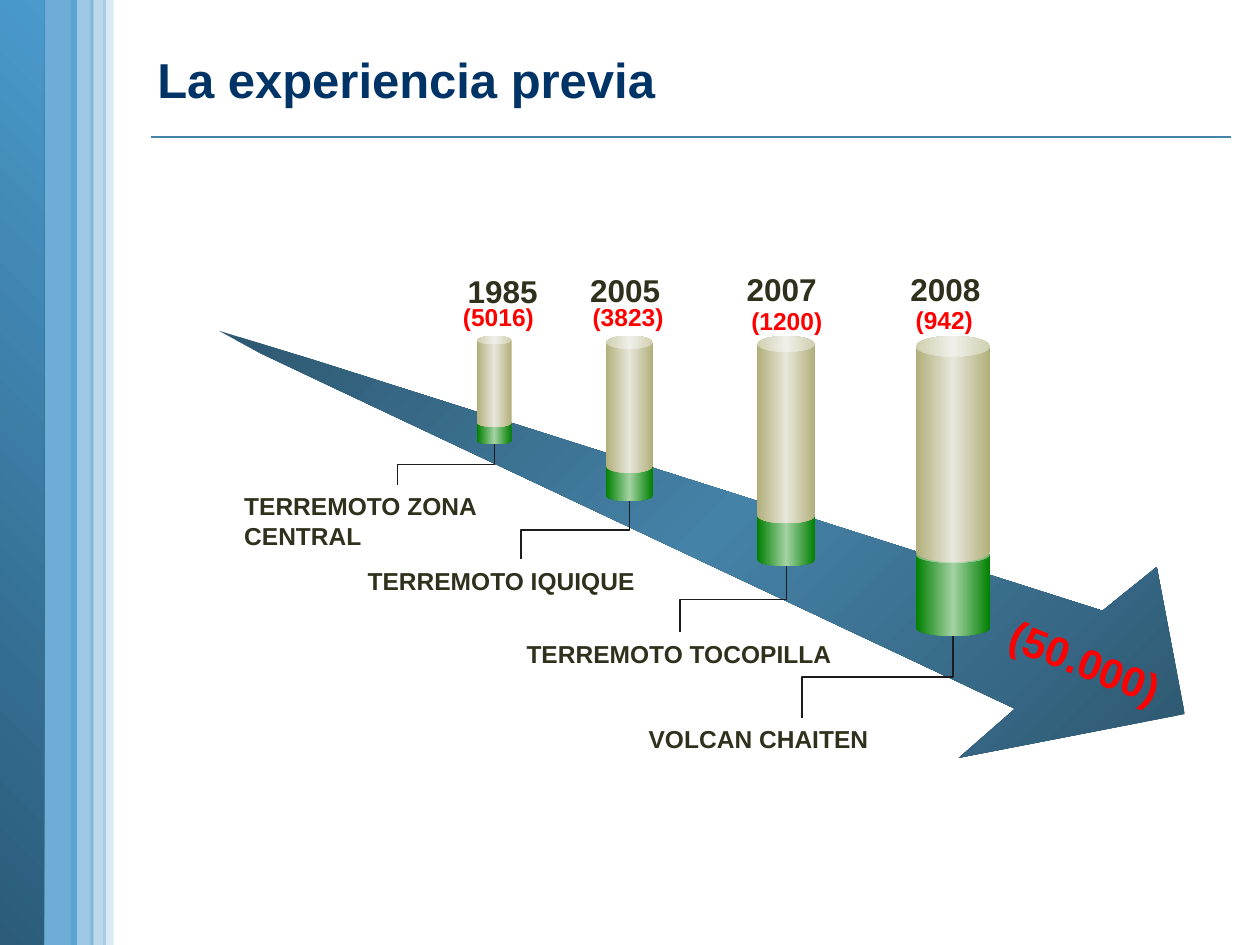
from lxml.etree import SubElement
from pptx import Presentation
from pptx.dml.color import RGBColor
from pptx.enum.shapes import MSO_CONNECTOR as Connector, MSO_SHAPE as Shape
from pptx.enum.text import MSO_ANCHOR as Anchor, PP_ALIGN as Align
from pptx.oxml import parse_xml
from pptx.oxml.ns import nsdecls, qn
from pptx.util import Pt

NAVY = RGBColor(0x00, 0x33, 0x66)
SKY = RGBColor(0x4A, 0x9A, 0xCC)
STEEL = RGBColor(0x45, 0x82, 0xA7)
GREEN = RGBColor(0x00, 0x80, 0x00)
PALE_GREEN = RGBColor(0xA4, 0xD2, 0xA4)
SAND = RGBColor(0xB2, 0xAF, 0x7A)
PALE_SAND = RGBColor(0xE7, 0xE7, 0xDC)
OLIVE = RGBColor(0x30, 0x31, 0x1D)
RED = RGBColor(0xFF, 0x00, 0x00)
BLACK = RGBColor(0x1C, 0x1C, 0x1C)

TITLE = "La experiencia previa"
TOTAL = "(50.000)"
STRIPES = [(59, 6, 20), (40.3, 13, 54), (51.8, 8.7, 37)]
ARROW = [(177.1, 205.2), (124.6, 188.6), (149, 201.6), (580.3, 404.6), (547.9, 433.4),
         (676.8, 408.2), (661, 324), (630, 349.2)]

EVENTS = [
    dict(year="1985", year_at=(253, 151.9), count="(5016)", count_at=(250.6, 169.2),
         label="TERREMOTO ZONA CENTRAL", label_at=(132.5, 277.2),
         left=272.6, width=19.8, sand=(192, 244, 0.238), green=(239.8, 253.8, 0.273)),
    dict(year="2005", year_at=(323, 151.2), count="(3823)", count_at=(324.7, 169.2),
         label="TERREMOTO IQUIQUE", label_at=(203, 319.7),
         left=346.3, width=26.8, sand=(191.8, 270.2, 0.282), green=(263.5, 286.2, 0.25)),
    dict(year="2007", year_at=(412.4, 150.5), count="(1200)", count_at=(415.4, 171.4),
         label="TERREMOTO TOCOPILLA", label_at=(293.8, 361.4),
         left=432.7, width=33.1, sand=(192, 299, 0.274), green=(291.6, 323.4, 0.217)),
    dict(year="2008", year_at=(506, 150.5), count="(942)", count_at=(505.4, 170.6),
         label="VOLCAN CHAITEN", label_at=(363.6, 410.4),
         left=523.4, width=42.4, sand=(192, 321.1, 0.279), green=(312.5, 363.4, 0.214)),
]
LABEL_WIDTH = 189.4
NUMBER_WIDTH = 68.4

presentation = Presentation()
presentation.slide_width, presentation.slide_height = Pt(720), Pt(540)
slide = presentation.slides.add_slide(presentation.slide_layouts[6])
shapes = slide.shapes


def clean(shape):
    shape.shadow.inherit = False
    shape.line.fill.background()


def fill_gradient(shape, stops, angle):
    clean(shape)
    shape.fill.background()
    properties = shape._element.spPr
    gradient = parse_xml(f'<a:gradFill {nsdecls("a")} rotWithShape="1"><a:gsLst/>'
                         f'<a:lin ang="{angle * 60000}" scaled="0"/></a:gradFill>')
    for position, color, shade in stops:
        stop = SubElement(gradient[0], qn("a:gs"), pos=str(position * 1000))
        color_element = SubElement(stop, qn("a:srgbClr"), val=str(color))
        if shade:
            SubElement(color_element, qn("a:shade"), val=str(shade))
    properties.replace(properties.find(qn("a:noFill")), gradient)


def add_rectangle(left, width):
    return shapes.add_shape(Shape.RECTANGLE, Pt(left), 0, Pt(width), Pt(540))


def add_stripe(left, width, opacity):
    stripe = add_rectangle(left, width)
    clean(stripe)
    stripe.fill.solid()
    stripe.fill.fore_color.rgb = SKY
    color_element = stripe._element.spPr.find(qn("a:solidFill"))[0]
    SubElement(color_element, qn("a:alpha"), val=str(opacity * 1000))


def add_can(event, part, edge, middle):
    top, bottom, rim = event[part]
    can = shapes.add_shape(Shape.CAN, Pt(event["left"]), Pt(top),
                           Pt(event["width"]), Pt(bottom - top))
    can.adjustments[0] = rim
    fill_gradient(can, [(0, edge, None), (50, middle, None), (100, edge, None)], 0)


def add_text(text, left, top, width, height, size, color, align=Align.CENTER):
    box = shapes.add_textbox(Pt(left), Pt(top), Pt(width), Pt(height))
    box.text_frame.word_wrap = True
    paragraph = box.text_frame.paragraphs[0]
    paragraph.text = text
    paragraph.alignment = align
    paragraph.font.name = "Arial"
    paragraph.font.size = Pt(size)
    paragraph.font.bold = True
    paragraph.font.color.rgb = color
    return box


def add_line(kind, start, end, color, width):
    line = shapes.add_connector(kind, *map(Pt, start + end))
    line.line.color.rgb = color
    line.line.width = Pt(width)
    SubElement(line._element.spPr, qn("a:effectLst"))
    return line


def add_leader(event):
    x1, y1 = event["left"] + event["width"] / 2, event["green"][1]
    x2, y2 = event["label_at"][0] + LABEL_WIDTH / 2, event["label_at"][1]
    middle_x, middle_y = (x1 + x2) / 2, (y1 + y2) / 2
    across, down = (x1 - x2) / 2, (y2 - y1) / 2
    leader = add_line(Connector.ELBOW, (middle_x - down, middle_y - across),
                      (middle_x + down, middle_y + across), BLACK, 0.75)
    leader._element.spPr.find(qn("a:xfrm")).set("rot", "5400000")


add_line(Connector.STRAIGHT, (86.4, 78.5), (703.4, 78.5), STEEL, 1)
add_stripe(21.6, 22.3, 80)
fill_gradient(add_rectangle(0, 25.2), [(0, SKY, 30196), (100, SKY, None)], 315)
for stripe in STRIPES:
    add_stripe(*stripe)

builder = shapes.build_freeform(*ARROW[0], scale=12700)
builder.add_line_segments(ARROW[1:], close=True)
fill_gradient(builder.convert_to_shape(),
              [(0, STEEL, 41176), (50, STEEL, None), (100, STEEL, 41176)], 45)

for event in EVENTS:
    add_can(event, "green", GREEN, PALE_GREEN)
    add_leader(event)
    add_can(event, "sand", SAND, PALE_SAND)
    add_text(event["year"], *event["year_at"], NUMBER_WIDTH, 28.8, 18, OLIVE)
    add_text(event["count"], *event["count_at"], NUMBER_WIDTH, 24.5, 14, RED)
    add_text(event["label"], *event["label_at"], LABEL_WIDTH, 24.5, 14, OLIVE, Align.LEFT)

title = add_text(TITLE, 82.8, 5, 626.4, 80, 28, NAVY, Align.LEFT)
title.text_frame.vertical_anchor = Anchor.MIDDLE
total = add_text(TOTAL, 563, 360, 114.5, 36.7, 24, RED)
total.rotation = 21.8

presentation.save("out.pptx")
